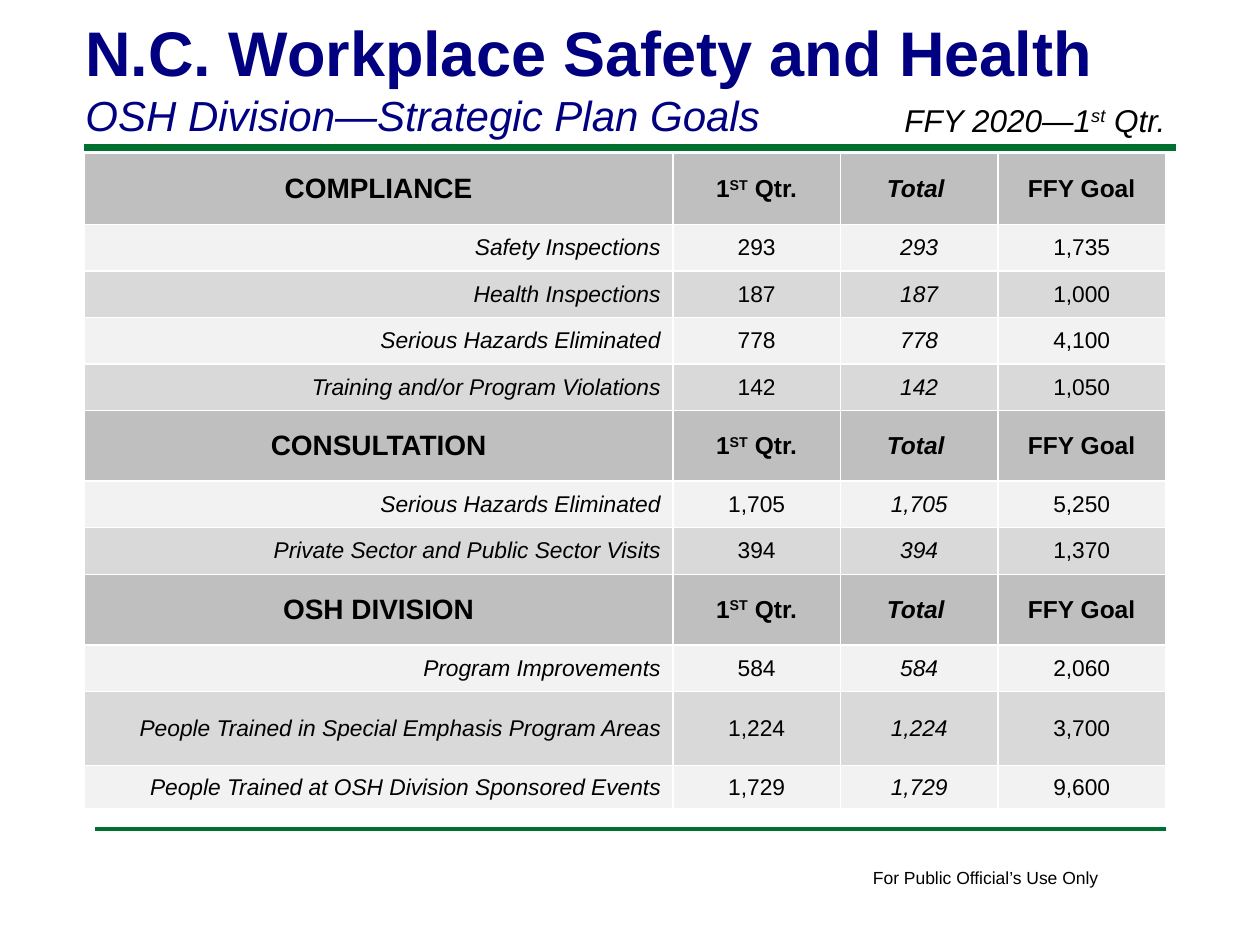
from lxml import etree
from pptx import Presentation
from pptx.dml.color import RGBColor
from pptx.enum.shapes import MSO_CONNECTOR
from pptx.enum.text import MSO_ANCHOR, MSO_AUTO_SIZE, PP_ALIGN
from pptx.oxml.ns import qn
from pptx.util import Inches, Pt

LEFT, CENTER, RIGHT = PP_ALIGN.LEFT, PP_ALIGN.CENTER, PP_ALIGN.RIGHT
MIDDLE, GROW = MSO_ANCHOR.MIDDLE, MSO_AUTO_SIZE.SHAPE_TO_FIT_TEXT
STRAIGHT = MSO_CONNECTOR.STRAIGHT
BLACK, NAVY, GREEN, WHITE = "000000", "000080", "007030", "FFFFFF"
HEAD_FILL, BAND_FILLS = "BFBFBF", ("F2F2F2", "D9D9D9")

RULES = [(0.67, 9.33, 1.17, 4), (0.75, 9.25, 6.58, 2)]
TEXTS = [
    ((6.83, 6.83, 2.01, 0.27), False,
     [("For Public Official’s Use Only", 10, BLACK, False, False)]),
    ((0.58, 0.06, 8.25, 1.11), True,
     [("N.C. Workplace Safety and Health", 36, NAVY, True, False),
      ("OSH Division—Strategic Plan Goals", 24, NAVY, False, True)]),
    ((7.08, 0.75, 2.5, 0.4), True,
     [(("FFY 2020—1", "st", " Qtr."), 18, BLACK, False, True)]),
]
HEADINGS = [("1", "ST", " Qtr."), "Total ", "FFY Goal"]
SECTIONS = [
    ("COMPLIANCE", [
        ("Safety Inspections", "293", "293", "1,735"),
        ("Health Inspections", "187", "187", "1,000"),
        ("Serious Hazards Eliminated", "778", "778", "4,100"),
        ("Training and/or Program Violations", "142", "142", "1,050")]),
    ("CONSULTATION", [
        ("Serious Hazards Eliminated", "1,705", "1,705", "5,250"),
        ("Private Sector and Public Sector Visits", "394", "394", "1,370")]),
    ("OSH DIVISION", [
        ("Program Improvements", "584", "584", "2,060"),
        ("People Trained in Special Emphasis Program Areas", "1,224", "1,224", "3,700"),
        ("People Trained at OSH Division Sponsored Events", "1,729", "1,729", "9,600")]),
]
COL_WIDTHS = [4.67, 1.33, 1.25, 1.33]
ROW_HEIGHTS = [0.56] + [0.37] * 4 + [0.56] + [0.37] * 2 + [0.56, 0.37, 0.59, 0.34]


def rgb(color):
    """Turn a hex string into a colour."""
    return RGBColor.from_string(color)


def write(p, text, size, color, bold, italic, align=LEFT):
    """Fill a paragraph; a tuple holds base, superscript and base text."""
    p.alignment = align
    font = p.font
    font.name, font.size = "Arial", Pt(size)
    font.bold, font.italic = bold, italic
    font.color.rgb = rgb(color)
    for i, part in enumerate((text,) if isinstance(text, str) else text):
        r = p.add_run()
        r.text = part
        if i == 1:
            r._r.get_or_add_rPr().set("baseline", "30000")


def add_rule(slide, x1, x2, y, width):
    """Draw a horizontal green line."""
    line = slide.shapes.add_connector(STRAIGHT, Inches(x1), Inches(y), Inches(x2), Inches(y))
    line.line.color.rgb = rgb(GREEN)
    line.line.width = Pt(width)
    etree.SubElement(line._element.spPr, qn("a:effectLst"))


def add_text(slide, box, wrap, lines):
    """Add a text box with one paragraph per line."""
    tf = slide.shapes.add_textbox(*map(Inches, box)).text_frame
    tf.word_wrap, tf.auto_size = wrap, GROW
    for i, line in enumerate(lines):
        write(tf.add_paragraph() if i else tf.paragraphs[0], *line)


def style_cell(cell, fill):
    """Give a cell white borders, a fill and middle anchoring."""
    tcPr = cell._tc.get_or_add_tcPr()
    for side in ("lnL", "lnR", "lnT", "lnB"):
        ln = etree.SubElement(tcPr, qn(f"a:{side}"), w=str(Pt(1)))
        solid = etree.SubElement(ln, qn("a:solidFill"))
        etree.SubElement(solid, qn("a:srgbClr"), val=WHITE)
    cell.fill.solid()
    cell.fill.fore_color.rgb = rgb(fill)
    cell.vertical_anchor = MIDDLE


def add_goals(slide):
    """Add the table of goals, section by section."""
    rows = []
    for name, goals in SECTIONS:
        rows.append((True, HEAD_FILL, [name, *HEADINGS]))
        rows += [(False, BAND_FILLS[i % 2], goal) for i, goal in enumerate(goals)]
    table = slide.shapes.add_table(
        len(rows), len(COL_WIDTHS), Inches(0.67), Inches(1.22),
        Inches(sum(COL_WIDTHS)), Inches(sum(ROW_HEIGHTS))).table
    table.first_row = table.horz_banding = False
    for col, width in zip(table.columns, COL_WIDTHS):
        col.width = Inches(width)
    for row, height, (head, fill, texts) in zip(table.rows, ROW_HEIGHTS, rows):
        row.height = Inches(height)
        for c, (cell, text) in enumerate(zip(row.cells, texts)):
            style_cell(cell, fill)
            size = (16 if c == 0 else 14) if head else 13
            italic = c == 2 or (c == 0 and not head)
            align = RIGHT if c == 0 and not head else CENTER
            write(cell.text_frame.paragraphs[0], text, size, BLACK, head, italic, align)


def main():
    """Build and save the slide."""
    prs = Presentation()
    prs.slide_width, prs.slide_height = Inches(10), Inches(7.5)
    s = prs.slides.add_slide(prs.slide_layouts[6])
    for rule in RULES:
        add_rule(s, *rule)
    for text in TEXTS:
        add_text(s, *text)
    add_goals(s)
    prs.save("out.pptx")


if __name__ == "__main__":
    main()
